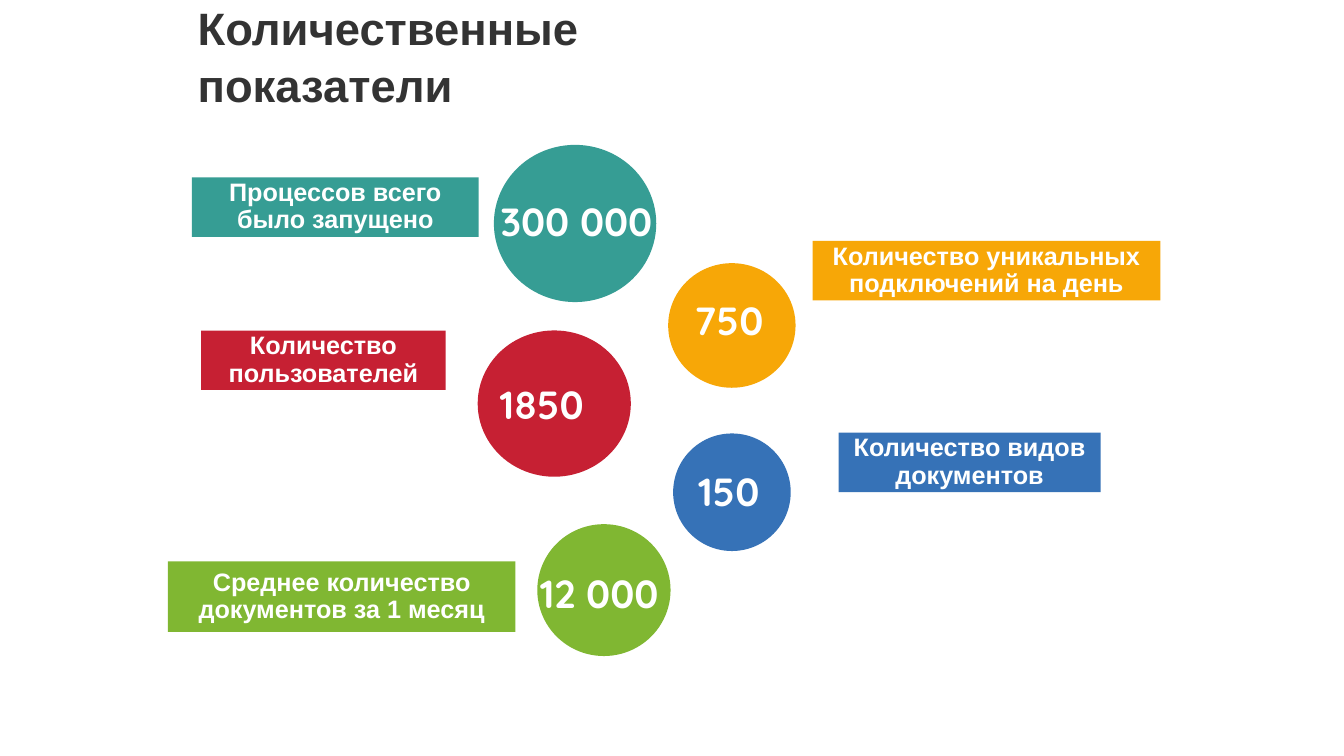
from pptx import Presentation
from pptx.dml.color import RGBColor
from pptx.enum.shapes import MSO_SHAPE as Shape
from pptx.enum.text import MSO_ANCHOR as Anchor, MSO_AUTO_SIZE as AutoSize, PP_ALIGN as Align
from pptx.util import Pt

WHITE = RGBColor(0xFF, 0xFF, 0xFF)
DARK = RGBColor(0x33, 0x33, 0x33)
RED = RGBColor(0xC6, 0x20, 0x33)
ORANGE = RGBColor(0xF7, 0xA7, 0x07)
BLUE = RGBColor(0x36, 0x72, 0xB7)
GREEN = RGBColor(0x80, 0xB7, 0x32)
TEAL = RGBColor(0x36, 0x9D, 0x94)

# Content: boxes are left, top, width, height in points
HEADING = "Количественные показатели"
HEADING_BOX = (134, 18.7, 435.6, 64.8)
NUMBER_HEIGHT = 41
# label, label box, circle box, number, number left, top, width, colour
INDICATORS = [
    ("Процессов всего было запущено", (137, 126.7, 205, 42.5),
     (352.8, 103.5, 116, 112.3), "300 000", (350.6, 137.5, 126.7), TEAL),
    ("Количество уникальных подключений на день", (580.4, 172, 248.4, 42.5),
     (477.3, 188, 91, 89), "750", (488.9, 208.1, 78.5), ORANGE),
    ("Количество пользователей", (143.6, 236.1, 174.7, 42.5),
     (341.2, 236, 109.4, 104.5), "1850", (349.9, 267.8, 78.5), RED),
    ("Количество видов документов", (599, 309, 187.2, 42.5),
     (480.8, 309.6, 84, 84), "150", (491.8, 330.5, 78.5), BLUE),
    ("Среднее количество документов за 1 месяц", (120, 401, 248.2, 50.4),
     (383.8, 374.4, 95.2, 94.2), "12 000", (378.7, 403.2, 105.1), GREEN),
]


def write(frame, text, size, font="Arial", color=WHITE, align=Align.LEFT,
          anchor=Anchor.TOP, spacing=1.0, inset=None):
    frame.word_wrap = True
    frame.auto_size = AutoSize.NONE
    frame.vertical_anchor = anchor
    if inset is not None:
        frame.margin_left = frame.margin_right = Pt(inset)
        frame.margin_top = frame.margin_bottom = Pt(inset)
    paragraph = frame.paragraphs[0]
    paragraph.alignment = align
    paragraph.line_spacing = spacing
    run = paragraph.add_run()
    run.text = text
    run.font.name = font
    run.font.size = Pt(size)
    run.font.bold = True
    run.font.color.rgb = color


def add_filled(slide, kind, box, color):
    shape = slide.shapes.add_shape(kind, *map(Pt, box))
    shape.shadow.inherit = False
    shape.fill.solid()
    shape.fill.fore_color.rgb = color
    shape.line.fill.background()
    return shape


def main():
    deck = Presentation()
    deck.slide_width, deck.slide_height = Pt(960), Pt(540)
    slide = deck.slides.add_slide(deck.slide_layouts[5])

    # Heading
    heading = slide.shapes.title
    heading.left, heading.top, heading.width, heading.height = map(Pt, HEADING_BOX)
    write(heading.text_frame, HEADING, 32.4, color=DARK,
          anchor=Anchor.BOTTOM, spacing=1.05)

    # Indicators: label bar, circle and its number
    for label, label_box, circle_box, number, number_place, color in INDICATORS:
        bar = add_filled(slide, Shape.RECTANGLE, label_box, color)
        write(bar.text_frame, label, 18, align=Align.CENTER,
              anchor=Anchor.MIDDLE, spacing=0.9, inset=2)
        add_filled(slide, Shape.OVAL, circle_box, color)
        figure = slide.shapes.add_textbox(*map(Pt, (*number_place, NUMBER_HEIGHT)))
        write(figure.text_frame, number, 28, font="Quicksand")

    deck.save("out.pptx")


if __name__ == "__main__":
    main()
